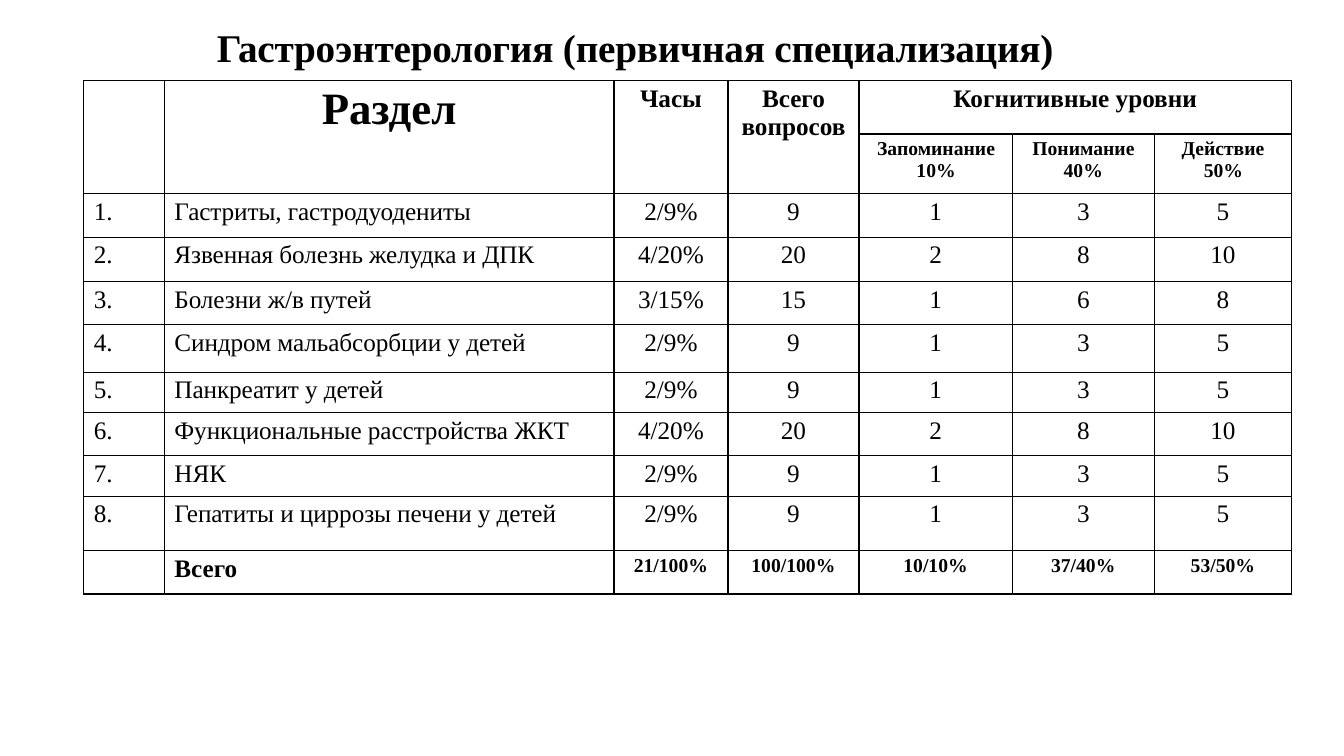
from dataclasses import dataclass

from pptx import Presentation
from pptx.dml.color import RGBColor
from pptx.enum.text import PP_ALIGN
from pptx.oxml.ns import qn
from pptx.util import Inches, Pt
from lxml.etree import SubElement


@dataclass(frozen=True)
class Theme:
    font: str = "Times New Roman"
    ink: RGBColor = RGBColor(0, 0, 0)
    title: int = 28
    section: int = 32
    body: int = 18
    small: int = 14
    border: int = 1


THEME = Theme()
COLUMN_WIDTHS = [0.8, 4.46, 1.13, 1.3, 1.52, 1.41, 1.36]
ROW_HEIGHTS = [0.53, 0.57, 0.43, 0.44, 0.43, 0.47, 0.4, 0.43, 0.4, 0.54, 0.43]
TOPICS = [
    ("Гастриты, гастродуодениты", "2/9%", 9, 1, 3, 5),
    ("Язвенная болезнь желудка и ДПК", "4/20%", 20, 2, 8, 10),
    ("Болезни ж/в путей", "3/15%", 15, 1, 6, 8),
    ("Синдром мальабсорбции у детей", "2/9%", 9, 1, 3, 5),
    ("Панкреатит у детей", "2/9%", 9, 1, 3, 5),
    ("Функциональные расстройства ЖКТ", "4/20%", 20, 2, 8, 10),
    ("НЯК", "2/9%", 9, 1, 3, 5),
    ("Гепатиты и циррозы печени у детей", "2/9%", 9, 1, 3, 5),
]
TOTALS = ["21/100%", "100/100%", "10/10%", "37/40%", "53/50%"]
# Heading, left indent and first-line indent in inches
LEVELS = [
    ("Запоминание 10%", 0.57, -0.39),
    ("Понимание 40%", 0.51, -0.31),
    ("Действие 50%", 0.49, -0.22),
]


def write(frame, text, size=THEME.body, bold=False, align=PP_ALIGN.CENTER,
          before=3, left=0, first=0, spacing=0):
    """Fill a text frame; indents are in inches, before and spacing in points."""
    frame.word_wrap = True
    paragraph = frame.paragraphs[0]
    paragraph.alignment = align
    paragraph.space_before = Pt(before)
    properties = paragraph._p.get_or_add_pPr()
    properties.set("marL", str(Inches(left)))
    properties.set("indent", str(Inches(first)))
    run = paragraph.add_run()
    run.text = text
    run.font.name = THEME.font
    run.font.size = Pt(size)
    run.font.bold = bold
    run.font.color.rgb = THEME.ink
    run._r.get_or_add_rPr().set("spc", str(round(spacing * 100)))


def add_borders(cell):
    properties = cell._tc.get_or_add_tcPr()
    for position, side in enumerate(("a:lnL", "a:lnR", "a:lnT", "a:lnB")):
        line = SubElement(properties, qn(side), w=str(Pt(THEME.border)))
        fill = SubElement(line, qn("a:solidFill"))
        SubElement(fill, qn("a:srgbClr"), val=str(THEME.ink))
        properties.remove(line)
        properties.insert(position, line)


def add_plain_table(slide, left, top):
    """Add a bordered table without fills or banding."""
    table = slide.shapes.add_table(
        len(ROW_HEIGHTS), len(COLUMN_WIDTHS), Inches(left), Inches(top),
        Inches(sum(COLUMN_WIDTHS)), Inches(sum(ROW_HEIGHTS))).table
    table.first_row = table.horz_banding = False
    for column, width in zip(table.columns, COLUMN_WIDTHS):
        column.width = Inches(width)
    for row, height in zip(table.rows, ROW_HEIGHTS):
        row.height = Inches(height)
    for cell in table.iter_cells():
        cell.margin_left = cell.margin_right = cell.margin_bottom = 0
        cell.margin_top = Inches(0.04)
        cell.fill.background()
        add_borders(cell)
    return table


def fill_header(table):
    for column in range(4):
        table.cell(0, column).merge(table.cell(1, column))
    table.cell(0, 4).merge(table.cell(0, 6))
    write(table.cell(0, 1).text_frame, "Раздел", size=THEME.section, bold=True, before=2.5)
    headings = {2: "Часы", 3: "Всего вопросов", 4: "Когнитивные уровни"}
    for column, heading in headings.items():
        write(table.cell(0, column).text_frame, heading, bold=True)
    for column, (level, left, first) in enumerate(LEVELS, start=4):
        write(table.cell(1, column).text_frame, level, size=THEME.small, bold=True,
              align=PP_ALIGN.LEFT, left=left, first=first)


def fill_topics(table):
    for number, (topic, *figures) in enumerate(TOPICS, start=1):
        row = number + 1
        for column, label in enumerate((f"{number}.", topic)):
            write(table.cell(row, column).text_frame, label,
                  align=PP_ALIGN.LEFT, left=0.1, spacing=-0.05)
        for column, figure in enumerate(figures, start=2):
            write(table.cell(row, column).text_frame, str(figure))


def fill_totals(table):
    row = len(ROW_HEIGHTS) - 1
    write(table.cell(row, 1).text_frame, "Всего", bold=True, align=PP_ALIGN.LEFT, left=0.1)
    for column, total in enumerate(TOTALS, start=2):
        write(table.cell(row, column).text_frame, total, size=THEME.small, bold=True)


def add_title(slide, text):
    frame = slide.shapes.add_textbox(
        Inches(2.14), Inches(0.22), Inches(8.41), Inches(0.49)).text_frame
    frame.margin_left = frame.margin_right = frame.margin_bottom = 0
    frame.margin_top = Inches(0.01)
    write(frame, text, size=THEME.title, bold=True, align=PP_ALIGN.LEFT,
          before=0.9, left=0.01, spacing=-0.15)


def main():
    presentation = Presentation()
    presentation.slide_width = Inches(13.33)
    presentation.slide_height = Inches(7.5)
    slide = presentation.slides.add_slide(presentation.slide_layouts[6])
    table = add_plain_table(slide, left=0.83, top=0.8)
    fill_header(table)
    fill_topics(table)
    fill_totals(table)
    add_title(slide, "Гастроэнтерология (первичная специализация)")
    presentation.save("out.pptx")


if __name__ == "__main__":
    main()
